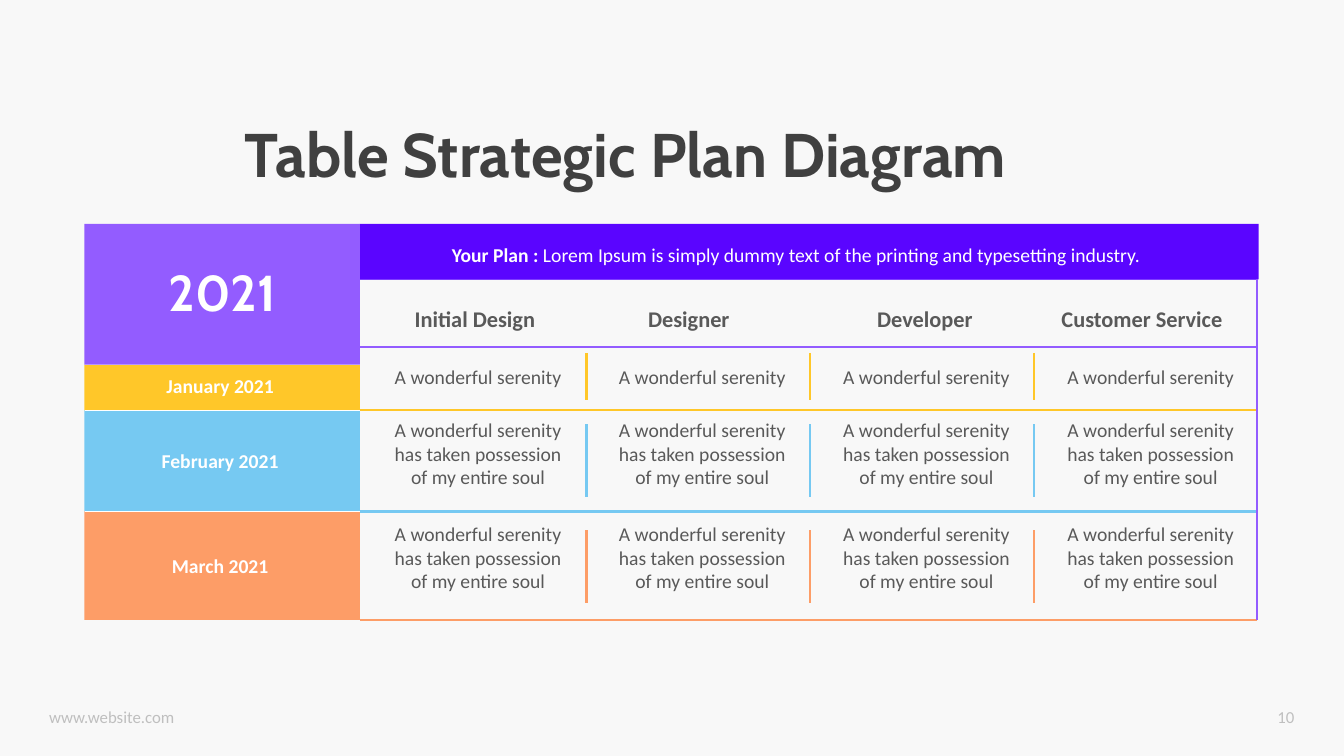
from dataclasses import dataclass

from lxml.etree import SubElement
from pptx import Presentation
from pptx.dml.color import RGBColor
from pptx.enum.shapes import MSO_CONNECTOR, MSO_SHAPE
from pptx.enum.text import PP_ALIGN
from pptx.oxml.ns import qn
from pptx.util import Cm, Pt


@dataclass(frozen=True)
class Theme:
    heading_font: str = "Cabin"
    body_font: str = "Calibri"
    background: str = "F8F8F8"
    white: str = "FFFFFF"
    title: str = "404040"
    text: str = "595959"
    footer: str = "BFBFBF"
    violet: str = "935CFF"
    indigo: str = "5A05FF"
    yellow: str = "FFC729"
    blue: str = "76C9F2"
    orange: str = "FD9D67"
    title_size: int = 44
    year_size: int = 36
    column_size: int = 16
    body_size: int = 14
    footer_size: int = 12
    rule: float = 1.5
    separator: float = 1


class Painter:
    """Draws on one slide in one theme; all lengths are centimetres."""

    def __init__(self, slide, theme):
        self.slide = slide
        self.theme = theme
        fill = slide.background.fill
        fill.solid()
        fill.fore_color.rgb = RGBColor.from_string(theme.background)

    def rect(self, left, top, right, bottom, color):
        sp = self.slide.shapes.add_shape(
            MSO_SHAPE.RECTANGLE, Cm(left), Cm(top), Cm(right - left), Cm(bottom - top))
        sp.shadow.inherit = False
        sp.fill.solid()
        sp.fill.fore_color.rgb = RGBColor.from_string(color)
        sp.line.fill.background()

    def line(self, x1, y1, x2, y2, color, width=None):
        cx = self.slide.shapes.add_connector(
            MSO_CONNECTOR.STRAIGHT, Cm(x1), Cm(y1), Cm(x2), Cm(y2))
        cx.line.color.rgb = RGBColor.from_string(color)
        cx.line.width = Pt(width or self.theme.rule)
        SubElement(cx._element.spPr, qn("a:effectLst"))

    def text(self, left, top, width, height, runs, size, color,
             font=None, align=PP_ALIGN.LEFT, spacing=1.0):
        """Add one paragraph; runs is a list of (words, bold) pairs."""
        box = self.slide.shapes.add_textbox(Cm(left), Cm(top), Cm(width), Cm(height))
        tf = box.text_frame
        tf.word_wrap = True
        p = tf.paragraphs[0]
        p.alignment = align
        p.line_spacing = spacing
        for words, bold in runs:
            r = p.add_run()
            r.text = words
            r.font.name = font or self.theme.body_font
            r.font.size = Pt(size)
            r.font.bold = bold
            r.font.color.rgb = RGBColor.from_string(color)

    def centered(self, center, top, width, height, runs, size, color, **style):
        self.text(center - width / 2, top, width, height, runs, size, color,
                  align=PP_ALIGN.CENTER, **style)


THEME = Theme()

# Table edges
LEFT, SPLIT, RIGHT = 2.13, 9.07, 31.67
TOP, BAND_BOTTOM, HEAD_BOTTOM = 5.64, 7.04, 8.74
YEAR_BOTTOM = 9.19

# Column rhythm
CELL_CENTER, CELL_PITCH, CELL_WIDTH = 12.05, 5.65, 5.05
DIVIDER_X, DIVIDER_PITCH = 14.78, 5.64
COLUMNS = [("Initial Design", 11.97), ("Designer", 17.36),
           ("Developer", 23.31), ("Customer Service", 28.78)]

SHORT = "A wonderful serenity"
LONG = "A wonderful serenity has taken possession of my entire soul"


@dataclass(frozen=True)
class Month:
    name: str
    color: str
    top: float
    bottom: float
    label_top: float
    cell_top: float
    cell_height: float
    divider: tuple
    words: str


MONTHS = [
    Month("January 2021", THEME.yellow, YEAR_BOTTOM, 10.34, 9.19, 9.07, 1.02,
          (8.89, 10.08), SHORT),
    Month("February 2021", THEME.blue, 10.34, 12.89, 11.07, 10.41, 2.06,
          (10.69, 12.52), LONG),
    Month("March 2021", THEME.orange, 12.89, 15.62, 13.72, 13.03, 2.06,
          (13.36, 15.19), LONG),
]


def draw_grid(s):
    for y in (BAND_BOTTOM, HEAD_BOTTOM):
        s.line(SPLIT, y, RIGHT, y, THEME.violet)
    for m in MONTHS:
        s.line(SPLIT, m.bottom, RIGHT, m.bottom, m.color)
        for i in range(len(COLUMNS) - 1):
            x = DIVIDER_X + i * DIVIDER_PITCH
            s.line(x, m.divider[0], x, m.divider[1], m.color)
        s.rect(LEFT, m.top, SPLIT, m.bottom, m.color)
    for m in MONTHS:
        s.line(LEFT, m.top, SPLIT, m.top, THEME.white, THEME.separator)
    s.rect(SPLIT, TOP, RIGHT + 0.05, BAND_BOTTOM, THEME.indigo)
    s.rect(LEFT, TOP, SPLIT, YEAR_BOTTOM, THEME.violet)
    s.line(RIGHT, BAND_BOTTOM, RIGHT, MONTHS[-1].bottom, THEME.violet)


def draw_words(s):
    s.text(5.92, 2.79, 22.02, 2.13, [("Table Strategic Plan Diagram", True)],
           THEME.title_size, THEME.title, font=THEME.heading_font)
    s.centered(5.6, 6.45, 5, 2.03, [("2021", True)],
               THEME.year_size, THEME.white, font=THEME.heading_font)
    s.centered(20.07, 5.87, 19.2, 0.91, [
        ("Your Plan : ", True),
        ("Lorem Ipsum is simply dummy text of the printing and typesetting industry.", False),
    ], THEME.body_size, THEME.white, spacing=1.2)
    for name, center in COLUMNS:
        s.centered(center, 7.43, 6, 1.19, [(name, True)],
                   THEME.column_size, THEME.text, spacing=1.2)
    for m in MONTHS:
        s.centered(5.55, m.label_top, 4, 1.07, [(m.name, True)],
                   THEME.body_size, THEME.white, spacing=1.2)
        for i in range(len(COLUMNS)):
            s.centered(CELL_CENTER + i * CELL_PITCH, m.cell_top, CELL_WIDTH,
                       m.cell_height, [(m.words, False)], THEME.body_size, THEME.text)
    s.text(0.99, 17.68, 6.22, 0.76, [("www.website.com", False)],
           THEME.footer_size, THEME.footer)
    s.text(30.56, 17.68, 2.31, 0.76, [("10", False)],
           THEME.footer_size, THEME.footer, align=PP_ALIGN.RIGHT)


def main():
    prs = Presentation()
    prs.slide_width, prs.slide_height = Cm(33.87), Cm(19.05)
    s = Painter(prs.slides.add_slide(prs.slide_layouts[6]), THEME)
    draw_grid(s)
    draw_words(s)
    prs.save("out.pptx")


if __name__ == "__main__":
    main()
